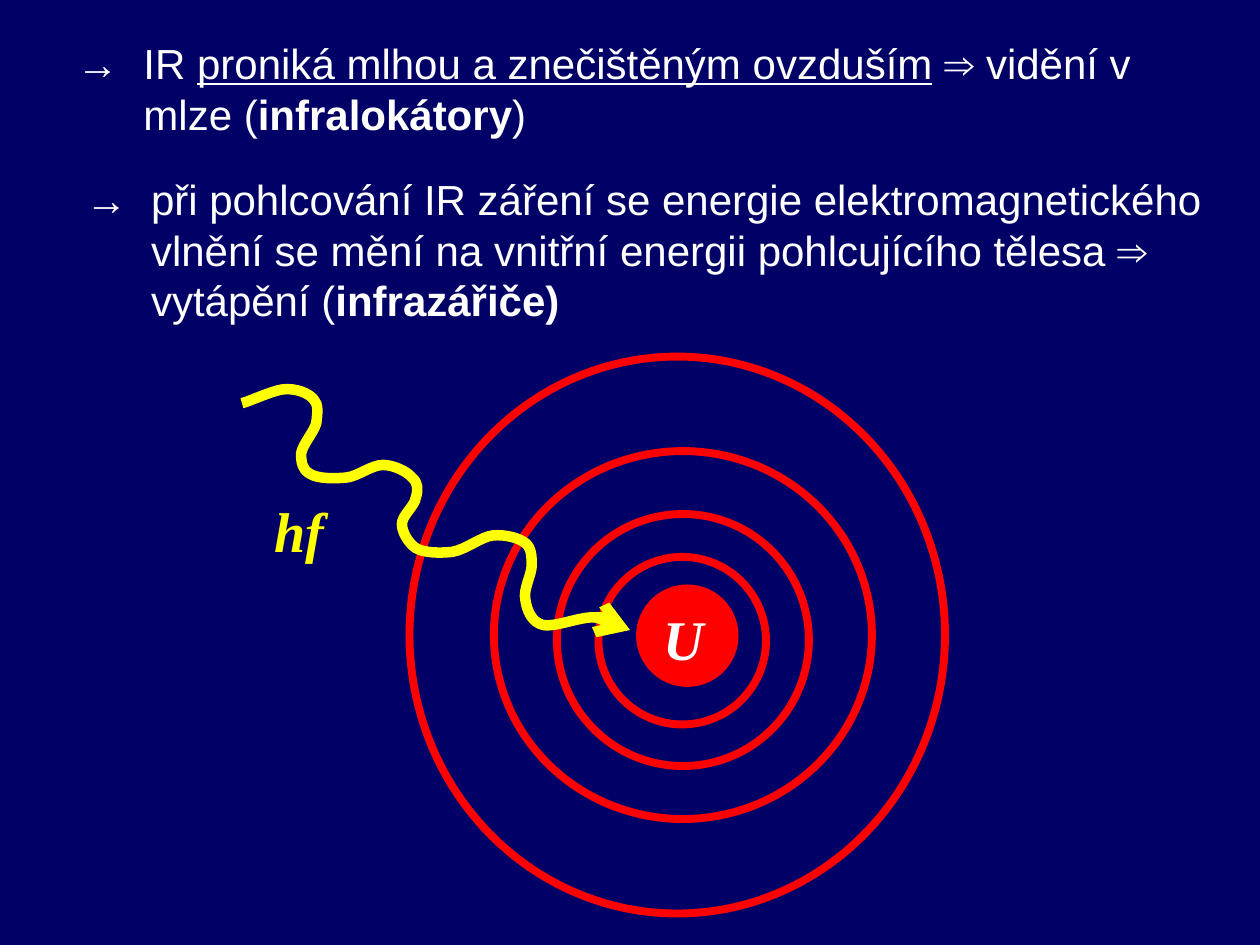
import pptx
import pptx.dml.color
import pptx.enum.shapes
import pptx.enum.text
import pptx.oxml.ns
import pptx.util
from lxml import etree

SCALE = 9144
HUES = {"navy": "000066", "white": "FFFFFF", "red": "FF0000", "sun": "FFFF00"}
SANS = {"name": "Arial", "size": pptx.util.Pt(24)}
SIGN = {"name": "Times New Roman", "size": pptx.util.Pt(32),
        "bold": True, "italic": True}
WAVE = [
    (0, 12), (5, 11), (24, 2), (33, 1), (43, 0), (53, 4), (57, 9),
    (61, 13), (60, 20), (59, 28), (57, 35), (48, 45), (47, 52),
    (47, 59), (48, 65), (54, 68), (60, 72), (73, 72), (83, 71),
    (92, 70), (103, 61), (112, 61), (120, 61), (131, 66), (135, 71),
    (140, 75), (140, 81), (138, 87), (137, 94), (127, 101), (127, 108),
    (127, 114), (132, 123), (138, 127), (145, 131), (157, 131), (167, 130),
    (178, 128), (190, 118), (199, 117), (209, 116), (220, 119), (225, 123),
    (230, 127), (230, 134), (230, 141), (230, 148), (223, 160), (225, 168),
    (226, 176), (230, 186), (239, 188), (249, 190), (269, 181), (281, 182),
    (292, 182), (302, 190), (308, 192),
]


def px(num):
    """Turn px into EMU."""
    return pptx.util.Emu(num * SCALE)


def hue(name):
    """Give the colour of that name."""
    return pptx.dml.color.RGBColor.from_string(HUES[name])


def style(item, form):
    """Set each attribute of item from a dict."""
    for key, val in form.items():
        setattr(item, key, val)


def text(slide, box, runs, tint, base, hang=None, wrap=True):
    """Write runs in a box, with a left margin and hanging indent."""
    frame = slide.shapes.add_textbox(*map(px, box)).text_frame
    style(frame, {"word_wrap": wrap,
                  "auto_size": pptx.enum.text.MSO_AUTO_SIZE.NONE})
    para = frame.paragraphs[0]
    if hang:
        edge, back = hang
        props = para._p.get_or_add_pPr()
        props.set("marL", str(px(edge)))
        props.set("indent", str(px(-back)))
    for words, form in runs:
        run = para.add_run()
        run.text = words
        style(run.font, {**base, **form})
        run.font.color.rgb = hue(tint)


def stroke(shape, tint, width):
    """Give a shape a plain line and no shadow."""
    shape.shadow.inherit = False
    shape.line.color.rgb = hue(tint)
    shape.line.width = pptx.util.Pt(width)


def atom(slide, box):
    """Draw the core U and its rings in a box."""
    left, top = box
    oval = pptx.enum.shapes.MSO_SHAPE.OVAL
    rings = [(183, 184, 75, 75), (150, 159, 133, 133), (117, 125, 200, 200),
             (67, 75, 300, 292), (0, 0, 425, 442)]
    for rank, (x, y, wide, high) in enumerate(rings):
        ring = slide.shapes.add_shape(
            oval, *map(px, (left + x, top + y, wide, high)))
        stroke(ring, "red", 4.5)
        if rank:
            ring.fill.background()
        else:
            ring.fill.solid()
            ring.fill.fore_color.rgb = hue("red")
    text(slide, (left + 192, top + 192, 52, 63), [("U", {})], "white", SIGN,
         wrap=False)


def photon(slide, box):
    """Draw the curved wave with its arrowhead and the label hf."""
    left, top = box
    dots = [(left + x, top + y) for x, y in WAVE]
    pen = slide.shapes.build_freeform(*dots[0], scale=SCALE)
    pen.add_line_segments(dots[1:], close=False)
    wave = pen.convert_to_shape()
    wave.fill.background()
    stroke(wave, "sun", 6)
    name = pptx.oxml.ns.qn
    track = next(wave._element.iter(name("a:path")))
    legs = track.findall(name("a:lnTo"))
    for start in range(0, len(legs), 3):
        curve = etree.SubElement(track, name("a:cubicBezTo"))
        for leg in legs[start:start + 3]:
            curve.append(leg[0])
            track.remove(leg)
    etree.SubElement(wave.line._get_or_add_ln(), name("a:tailEnd"),
                     type="arrow")
    text(slide, (left + 16, top + 81, 59, 63), [("hf", {})], "sun", SIGN,
         wrap=False)


def main():
    """Build the slide and save it."""
    deck = pptx.Presentation()
    style(deck, {"slide_width": px(1000), "slide_height": px(750)})
    slide = deck.slides.add_slide(deck.slide_layouts[6])
    slide.background.fill.solid()
    slide.background.fill.fore_color.rgb = hue("navy")
    text(slide, (0, 25, 925, 90), [
        ("→\tIR ", {}),
        ("proniká mlhou a znečištěným ovzduším", {"underline": True}),
        (" ", {}),
        ("⇒", {"name": "Times New Roman"}),
        (" vidění v mlze (", {}),
        ("infralokátory", {"bold": True}),
        (")", {}),
    ], "white", SANS, (104, 53))
    text(slide, (58, 133, 908, 130), [
        ("→\tpři pohlcování IR záření se energie elektromagnetického vlnění "
         "se mění na vnitřní energii pohlcujícího tělesa ⇒ vytápění (", {}),
        ("infrazářiče)", {"bold": True}),
    ], "white", SANS, (52, 52))
    atom(slide, (325, 283))
    photon(slide, (192, 308))
    deck.save("out.pptx")


if __name__ == "__main__":
    main()
